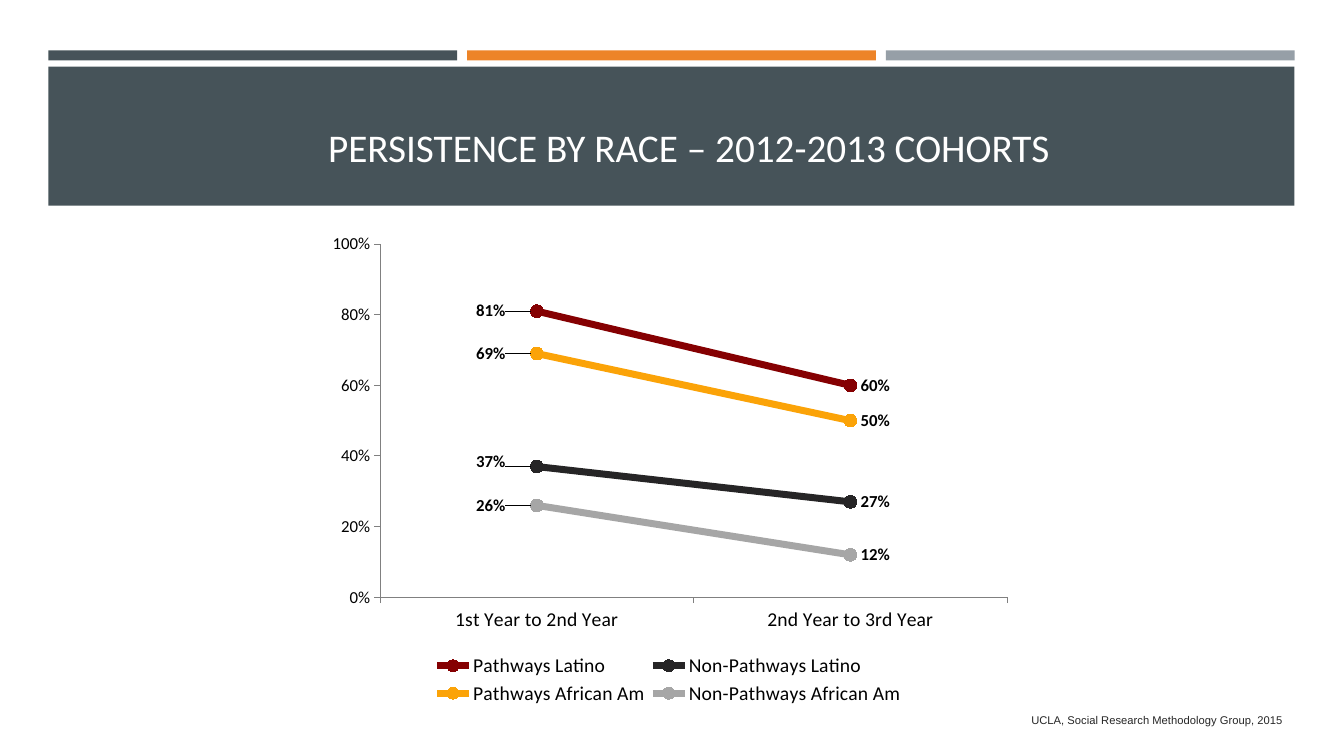
from dataclasses import dataclass

import pptx
import pptx.chart.data
import pptx.dml.color
import pptx.enum.chart
import pptx.enum.shapes
import pptx.enum.text
import pptx.oxml
import pptx.util
from pptx.util import Inches


@dataclass(frozen=True)
class Theme:
    """Colours, fonts and type sizes of the slide."""
    slate: str = "465359"
    orange: str = "ED8428"
    grey: str = "969FA7"
    white: str = "FFFFFF"
    black: str = "000000"
    source: str = "262626"
    axis: str = "808080"
    body_font: str = "Calibri"
    source_font: str = "Arial"
    title_size: int = 28
    category_size: int = 14
    value_size: int = 12
    source_size: int = 8


THEME = Theme()
CATEGORIES = ["1st Year to 2nd Year", "2nd Year to 3rd Year"]
SERIES = [
    ("Pathways Latino", (0.81, 0.60), "850002", 0),
    ("Non-Pathways Latino", (0.37, 0.27), "262526", -0.01),
    ("Pathways African Am", (0.69, 0.50), "FBA308", 0),
    ("Non-Pathways African Am", (0.26, 0.12), "A6A6A6", 0),
]


def rgb(value):
    """Return a colour object for a hex string."""
    return pptx.dml.color.RGBColor.from_string(value)


def set_all(target, values):
    """Set each attribute named in a dict."""
    for name, value in values.items():
        setattr(target, name, value)


def style_font(font, size, color, name=THEME.body_font, bold=False):
    """Apply size, colour, face and weight to a font."""
    set_all(font, {"size": pptx.util.Pt(size), "name": name, "bold": bold})
    font.color.rgb = rgb(color)


def add_bar(s, left, top, width, height, color):
    """Draw a plain filled rectangle."""
    sp = s.shapes.add_shape(pptx.enum.shapes.MSO_SHAPE.RECTANGLE,
                            Inches(left), Inches(top), Inches(width), Inches(height))
    sp.shadow.inherit = False
    sp.fill.solid()
    sp.fill.fore_color.rgb = rgb(color)
    sp.line.fill.background()


def add_text(s, box, text, frame, align, **font):
    """Place one line of text in a box."""
    tf = s.shapes.add_textbox(*map(Inches, box)).text_frame
    set_all(tf, frame)
    p = tf.paragraphs[0]
    p.alignment = align
    r = p.add_run()
    r.text = text
    style_font(r.font, **font)


def add_header(s, left, top, width):
    """Draw the three accent bars and the title band."""
    gap = 0.1
    bar = (width - 2 * gap) / 3
    for i, color in enumerate((THEME.slate, THEME.orange, THEME.grey)):
        add_bar(s, left + i * (bar + gap), top, bar, 0.1, color)
    add_bar(s, left, top + 0.16, width, 1.38, THEME.slate)
    add_text(s, (left + 1.35, top + 0.15, 10, 1.09),
             "PERSISTENCE BY RACE – 2012-2013 COHORTS",
             {"word_wrap": True, "vertical_anchor": pptx.enum.text.MSO_ANCHOR.BOTTOM},
             pptx.enum.text.PP_ALIGN.CENTER, size=THEME.title_size, color=THEME.white)


def manual_layout(parent, index, **parts):
    """Insert a manual layout into a chart element, replacing any present."""
    for old in parent.findall(pptx.oxml.ns.qn("c:layout")):
        parent.remove(old)
    body = "".join(f'<c:{tag} val="{value}"/>' for tag, value in parts.items())
    parent.insert(index, pptx.oxml.parse_xml(
        f'<c:layout {pptx.oxml.ns.nsdecls("c")}><c:manualLayout>{body}</c:manualLayout></c:layout>'))


def style_axis(axis, size):
    """Format an axis without gridlines."""
    ticks = pptx.enum.chart.XL_TICK_MARK
    set_all(axis, {"has_major_gridlines": False, "major_tick_mark": ticks.OUTSIDE,
                   "minor_tick_mark": ticks.NONE})
    axis.format.line.color.rgb = rgb(THEME.axis)
    axis.format.line.width = pptx.util.Pt(0.75)
    style_font(axis.tick_labels.font, size, THEME.black)


def style_series(series, color, label_shift):
    """Format a line, its markers and its value labels."""
    position = pptx.enum.chart.XL_LABEL_POSITION
    series.smooth = False
    set_all(series.marker, {"style": pptx.enum.chart.XL_MARKER_STYLE.CIRCLE, "size": 9})
    series.marker.format.fill.solid()
    series.marker.format.fill.fore_color.rgb = rgb(color)
    series.marker.format.line.color.rgb = rgb(color)
    series.format.line.color.rgb = rgb(color)
    series.format.line.width = pptx.util.Pt(5)
    labels = series.data_labels
    set_all(labels, {"show_value": True, "number_format": "0%",
                     "number_format_is_linked": False, "position": position.RIGHT})
    first = series.points[0].data_label
    first.position = position.LEFT
    for item in (labels, first):
        style_font(item.font, THEME.value_size, THEME.black, bold=True)
    for label in series._element.iter(pptx.oxml.ns.qn("c:dLbl")):
        manual_layout(label, 1, x=-0.03, y=label_shift)


def add_persistence_chart(s, box):
    """Draw the persistence line chart in a box."""
    data = pptx.chart.data.CategoryChartData(number_format="0%")
    data.categories = CATEGORIES
    for name, values, _, _ in SERIES:
        data.add_series(name, values)
    chart = s.shapes.add_chart(pptx.enum.chart.XL_CHART_TYPE.LINE_MARKERS,
                               *map(Inches, box), data).chart
    set_all(chart, {"has_title": False, "has_legend": True})
    style_font(chart.font, 10, THEME.black)
    set_all(chart.legend, {"position": pptx.enum.chart.XL_LEGEND_POSITION.BOTTOM,
                           "include_in_layout": False})
    style_font(chart.legend.font, THEME.category_size, THEME.black)
    manual_layout(chart.legend._element, 1, xMode="edge", yMode="edge",
                  x=0.16, y=0.88, w=0.68, h=0.12)
    plot = chart.plots[0]
    plot.vary_by_categories = False
    manual_layout(plot._element.getparent(), 0, layoutTarget="inner",
                  xMode="edge", yMode="edge", x=0.09, y=0.04, w=0.89, h=0.73)
    style_axis(chart.category_axis, THEME.category_size)
    style_axis(chart.value_axis, THEME.value_size)
    set_all(chart.value_axis, {"minimum_scale": 0, "maximum_scale": 1, "major_unit": 0.2})
    set_all(chart.value_axis.tick_labels, {"number_format": "0%",
                                          "number_format_is_linked": False})
    for series, (_, _, color, label_shift) in zip(plot.series, SERIES):
        style_series(series, color, label_shift)


def add_source(s, box):
    """Place the source line."""
    add_text(s, box, "UCLA, Social Research Methodology Group, 2015",
             {"word_wrap": False}, pptx.enum.text.PP_ALIGN.LEFT,
             size=THEME.source_size, color=THEME.source, name=THEME.source_font)


def main():
    """Build and save the slide."""
    prs = pptx.Presentation()
    set_all(prs, {"slide_width": Inches(13.33), "slide_height": Inches(7.5)})
    s = prs.slides.add_slide(prs.slide_layouts[6])
    add_header(s, 0.48, 0.5, 12.36)
    add_persistence_chart(s, (3.14, 2.23, 6.99, 4.8))
    add_source(s, (10.13, 7.03, 2.72, 0.24))
    prs.save("out.pptx")


if __name__ == "__main__":
    main()
